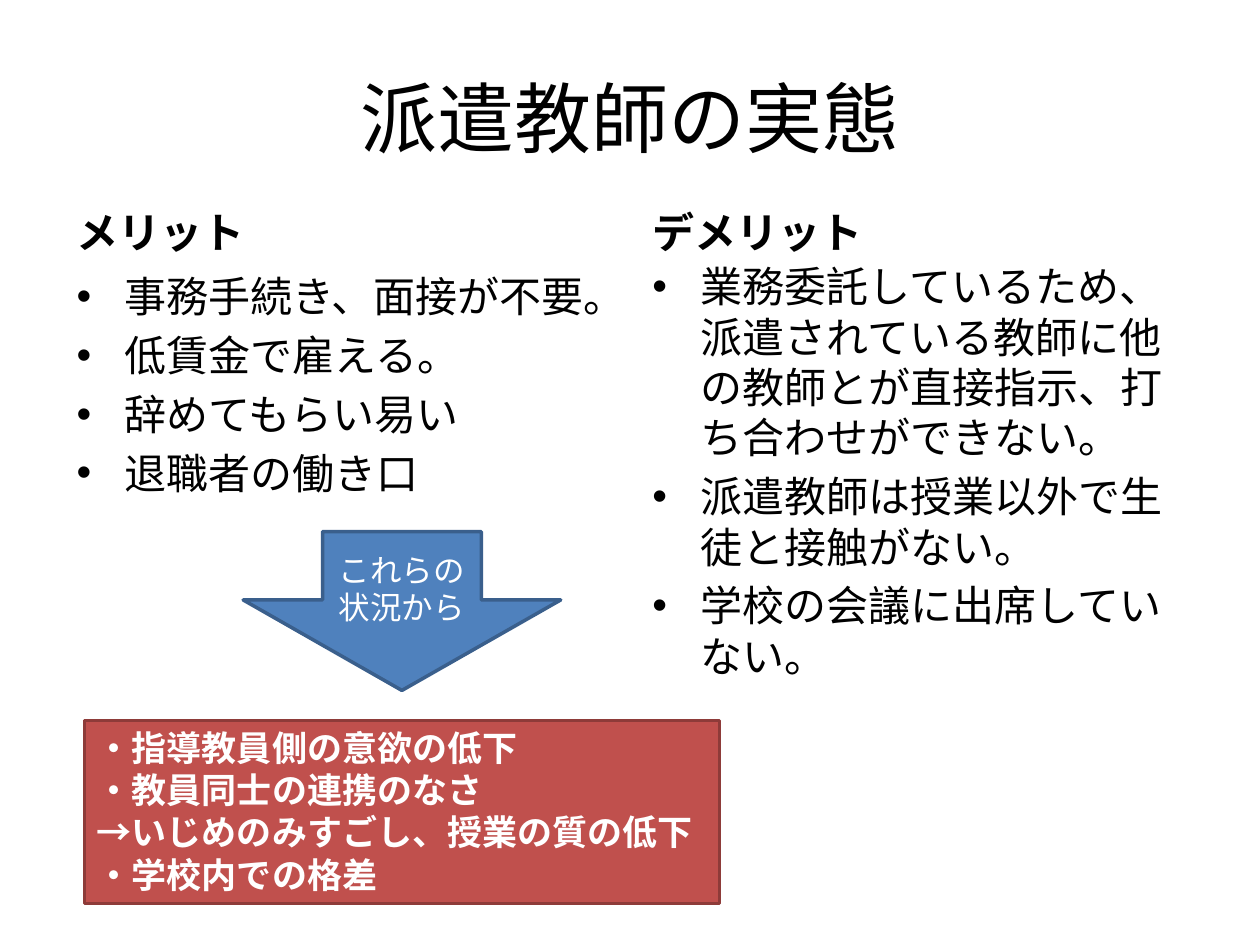
from lxml.etree import SubElement
from pptx import Presentation
from pptx.dml.color import RGBColor
from pptx.enum.shapes import MSO_SHAPE as SHAPE
from pptx.enum.text import MSO_ANCHOR as ANCHOR, PP_ALIGN as ALIGN
from pptx.oxml.ns import qn
from pptx.util import Inches, Pt

COLORS = {
    "text": "000000", "white": "FFFFFF",
    "arrow": "4F81BD", "arrow_line": "3A5F8C",
    "box": "C0504D", "box_line": "8E3B39",
}
MERITS = ["事務手続き、面接が不要。", "低賃金で雇える。", "辞めてもらい易い", "退職者の働き口"]
DEMERITS = [
    "業務委託しているため、派遣されている教師に他の教師とが直接指示、打ち合わせができない。",
    "派遣教師は授業以外で生徒と接触がない。",
    "学校の会議に出席していない。",
]
RESULTS = [
    "・指導教員側の意欲の低下", "・教員同士の連携のなさ",
    "→いじめのみすごし、授業の質の低下", "・学校内での格差",
]


def rgb(name):
    """Look up a named colour."""
    return RGBColor.from_string(COLORS[name])


def write(sp, lines, size, color="text", bold=False, align=ALIGN.LEFT,
          anchor=ANCHOR.TOP, before=0):
    """Fill a shape with one formatted paragraph per line."""
    tf = sp.text_frame
    tf.word_wrap = True
    tf.vertical_anchor = anchor
    tf.text = "\n".join(lines)
    for p in tf.paragraphs:
        p.alignment = align
        p.space_before = Pt(before)
        for r in p.runs:
            r.font.name = "Calibri"
            r.font.size = Pt(size)
            r.font.bold = bold
            r.font.color.rgb = rgb(color)


def add_bullets(tf):
    """Give every paragraph a hanging bullet."""
    for p in tf.paragraphs:
        pPr = p._p.get_or_add_pPr()
        pPr.set("marL", str(Inches(0.38)))
        pPr.set("indent", str(-Inches(0.38)))
        SubElement(pPr, qn("a:buFont")).set("typeface", "Arial")
        SubElement(pPr, qn("a:buChar")).set("char", "•")


def add_block(s, kind, x, y, w, h, name):
    """Add a filled and outlined preset shape."""
    sp = s.shapes.add_shape(kind, Inches(x), Inches(y), Inches(w), Inches(h))
    sp.shadow.inherit = False
    sp.fill.solid()
    sp.fill.fore_color.rgb = rgb(name)
    sp.line.color.rgb = rgb(name + "_line")
    sp.line.width = Pt(2)
    return sp


def add_title(s, x, y, w, h):
    """Add the centred slide title."""
    sp = s.shapes.add_textbox(Inches(x), Inches(y), Inches(w), Inches(h))
    write(sp, ["派遣教師の実態"], 44, align=ALIGN.CENTER, anchor=ANCHOR.MIDDLE)


def add_column(s, x, y, w, h, heading, items, offset):
    """Add a bold heading with a bulleted list starting at the offset below."""
    sp = s.shapes.add_textbox(Inches(x), Inches(y), Inches(w), Inches(0.7))
    write(sp, [heading], 24, bold=True, anchor=ANCHOR.BOTTOM, before=4.8)
    sp = s.shapes.add_textbox(Inches(x), Inches(y + offset), Inches(w), Inches(h - offset))
    write(sp, items, 24, before=4.8)
    add_bullets(sp.text_frame)


def add_arrow(s, x, y, w, h):
    """Add the labelled down arrow."""
    sp = add_block(s, SHAPE.DOWN_ARROW, x, y, w, h, "arrow")
    sp.adjustments[0] = 0.5
    sp.adjustments[1] = 0.57
    write(sp, ["これらの状況から"], 18, "white", align=ALIGN.CENTER, anchor=ANCHOR.MIDDLE)


def add_results(s, x, y, w, h):
    """Add the red box of consequences."""
    sp = add_block(s, SHAPE.RECTANGLE, x, y, w, h, "box")
    write(sp, RESULTS, 20, "white", bold=True)


def main():
    """Build and save the slide."""
    prs = Presentation()
    prs.slide_width, prs.slide_height = Inches(10), Inches(7.5)
    s = prs.slides.add_slide(prs.slide_layouts[6])
    add_title(s, 0.5, 0.3, 9, 1.25)
    add_column(s, 0.51, 1.39, 4.42, 2.6, "メリット", MERITS, 0.71)
    add_column(s, 5.08, 1.39, 4.42, 4.25, "デメリット", DEMERITS, 0.63)
    add_arrow(s, 1.93, 4.22, 2.52, 1.26)
    add_results(s, 0.67, 5.72, 5.04, 1.45)
    prs.save("out.pptx")


if __name__ == "__main__":
    main()
